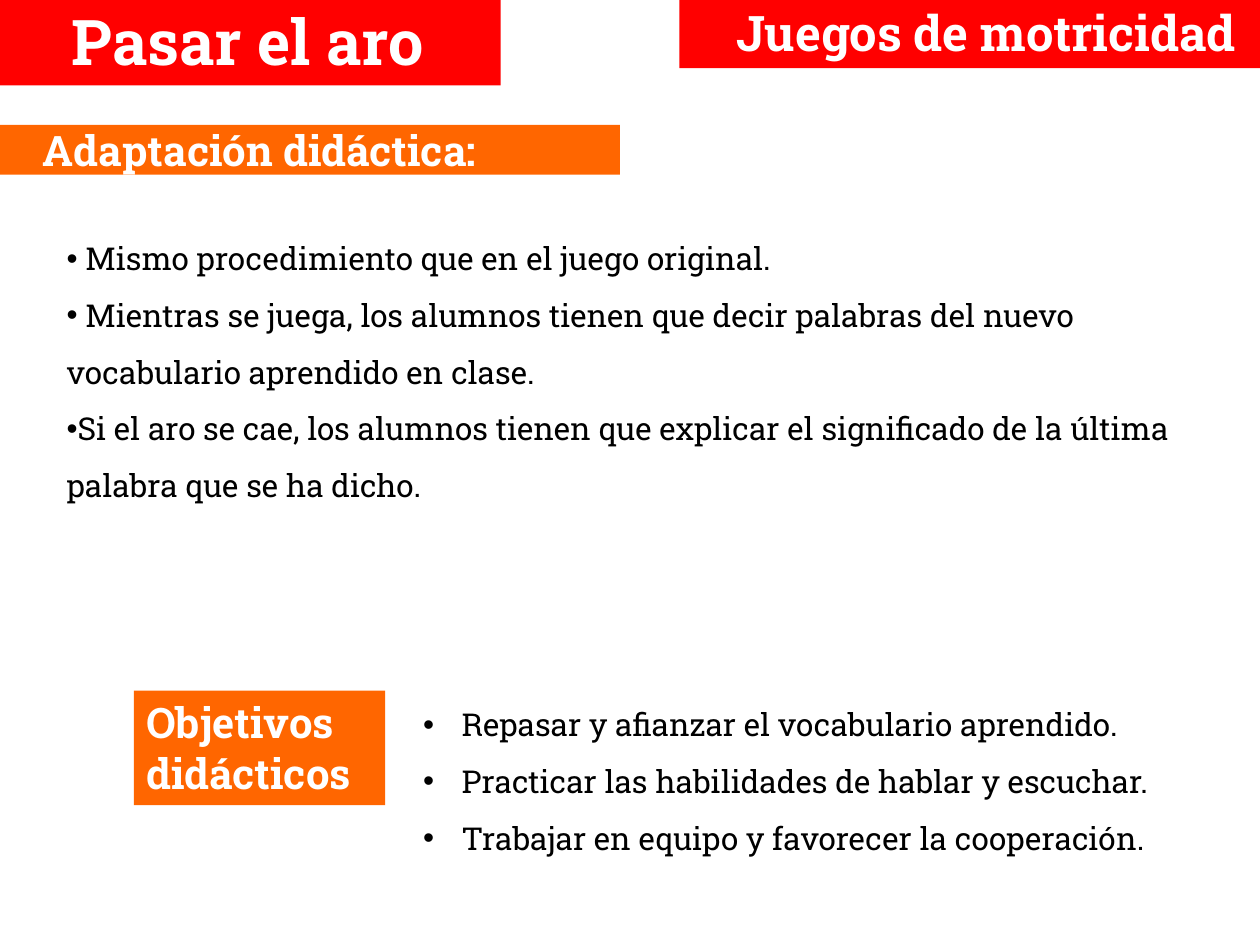
from dataclasses import dataclass

from lxml.etree import SubElement
from pptx import Presentation
from pptx.dml.color import RGBColor
from pptx.enum.shapes import MSO_SHAPE
from pptx.enum.text import MSO_ANCHOR, PP_ALIGN
from pptx.oxml.ns import qn
from pptx.slide import Slide
from pptx.text.text import TextFrame, _Paragraph
from pptx.util import Pt

FONT = "Roboto Slab"
COLOURS = {"red": "FF0000", "orange": "FF6600", "white": "FFFFFF", "black": "000000"}


@dataclass
class Area:
    left: float
    top: float
    width: float
    height: float

    def lengths(self) -> tuple[Pt, Pt, Pt, Pt]:
        return Pt(self.left), Pt(self.top), Pt(self.width), Pt(self.height)


@dataclass
class Banner:
    area: Area
    lines: list[str]
    fill: str
    size: float
    align: PP_ALIGN = PP_ALIGN.LEFT
    anchor: MSO_ANCHOR = MSO_ANCHOR.TOP
    left_inset: float = 7.2
    right_inset: float = 7.2


@dataclass
class BulletList:
    area: Area
    items: list[str]
    margin: float = 0
    indent: float = 0


BANNERS = [
    Banner(Area(76.5, 394.7, 143.6, 65.4), ["Objetivos", "didácticos"], "orange", 24),
    Banner(Area(0, 71.4, 354.3, 28.4), ["Adaptación didáctica:"], "orange", 24,
           anchor=MSO_ANCHOR.MIDDLE, left_inset=24.5),
    Banner(Area(388.3, -2, 332.4, 41), ["Juegos de motricidad"], "red", 28,
           align=PP_ALIGN.RIGHT, right_inset=14.5),
    Banner(Area(-3, -2, 289.2, 50.8), ["Pasar el aro"], "red", 36, align=PP_ALIGN.CENTER),
]

LISTS = [
    BulletList(Area(31, 122.4, 652.3, 170.6), [
        " Mismo procedimiento que en el juego original.",
        " Mientras se juega, los alumnos tienen que decir palabras del nuevo "
        "vocabulario aprendido en clase.",
        "Si el aro se cae, los alumnos tienen que explicar el significado de la "
        "última palabra que se ha dicho.",
    ]),
    BulletList(Area(216.7, 388.8, 503.3, 105.1), [
        "Repasar y afianzar el vocabulario aprendido.",
        "Practicar las habilidades de hablar y escuchar.",
        "Trabajar en equipo y favorecer la cooperación.",
    ], margin=40, indent=-22),
]


def add_paragraph(frame: TextFrame, index: int, text: str, size: float,
                  colour: str, bold: bool = False) -> _Paragraph:
    """Write one paragraph, using the frame's first one when index is 0."""
    para = frame.add_paragraph() if index else frame.paragraphs[0]
    span = para.add_run()
    span.text = text
    span.font.name = FONT
    span.font.size = Pt(size)
    span.font.bold = bold
    span.font.color.rgb = RGBColor.from_string(COLOURS[colour])
    return para


def add_bullet(para: _Paragraph, margin: float, indent: float) -> None:
    properties = para._p.get_or_add_pPr()
    properties.set("marL", str(Pt(margin)))
    properties.set("indent", str(Pt(indent)))
    SubElement(properties, qn("a:buFont"), typeface="Arial")
    SubElement(properties, qn("a:buChar"), char="•")


def draw_banner(page: Slide, banner: Banner) -> None:
    box = page.shapes.add_shape(MSO_SHAPE.RECTANGLE, *banner.area.lengths())
    box.shadow.inherit = False
    box.fill.solid()
    box.fill.fore_color.rgb = RGBColor.from_string(COLOURS[banner.fill])
    box.line.fill.background()
    frame = box.text_frame
    frame.word_wrap = True
    frame.vertical_anchor = banner.anchor
    frame.margin_left = Pt(banner.left_inset)
    frame.margin_right = Pt(banner.right_inset)
    for index, line in enumerate(banner.lines):
        para = add_paragraph(frame, index, line, banner.size, "white", bold=True)
        para.alignment = banner.align


def draw_list(page: Slide, bullets: BulletList) -> None:
    frame = page.shapes.add_textbox(*bullets.area.lengths()).text_frame
    frame.word_wrap = True
    for index, item in enumerate(bullets.items):
        para = add_paragraph(frame, index, item, 18, "black")
        para.line_spacing = 1.5
        add_bullet(para, bullets.margin, bullets.indent)


def main() -> None:
    deck = Presentation()
    deck.slide_width, deck.slide_height = Pt(720), Pt(540)
    page = deck.slides.add_slide(deck.slide_layouts[6])
    for banner in BANNERS:
        draw_banner(page, banner)
    for bullets in LISTS:
        draw_list(page, bullets)
    deck.save("out.pptx")


if __name__ == "__main__":
    main()
